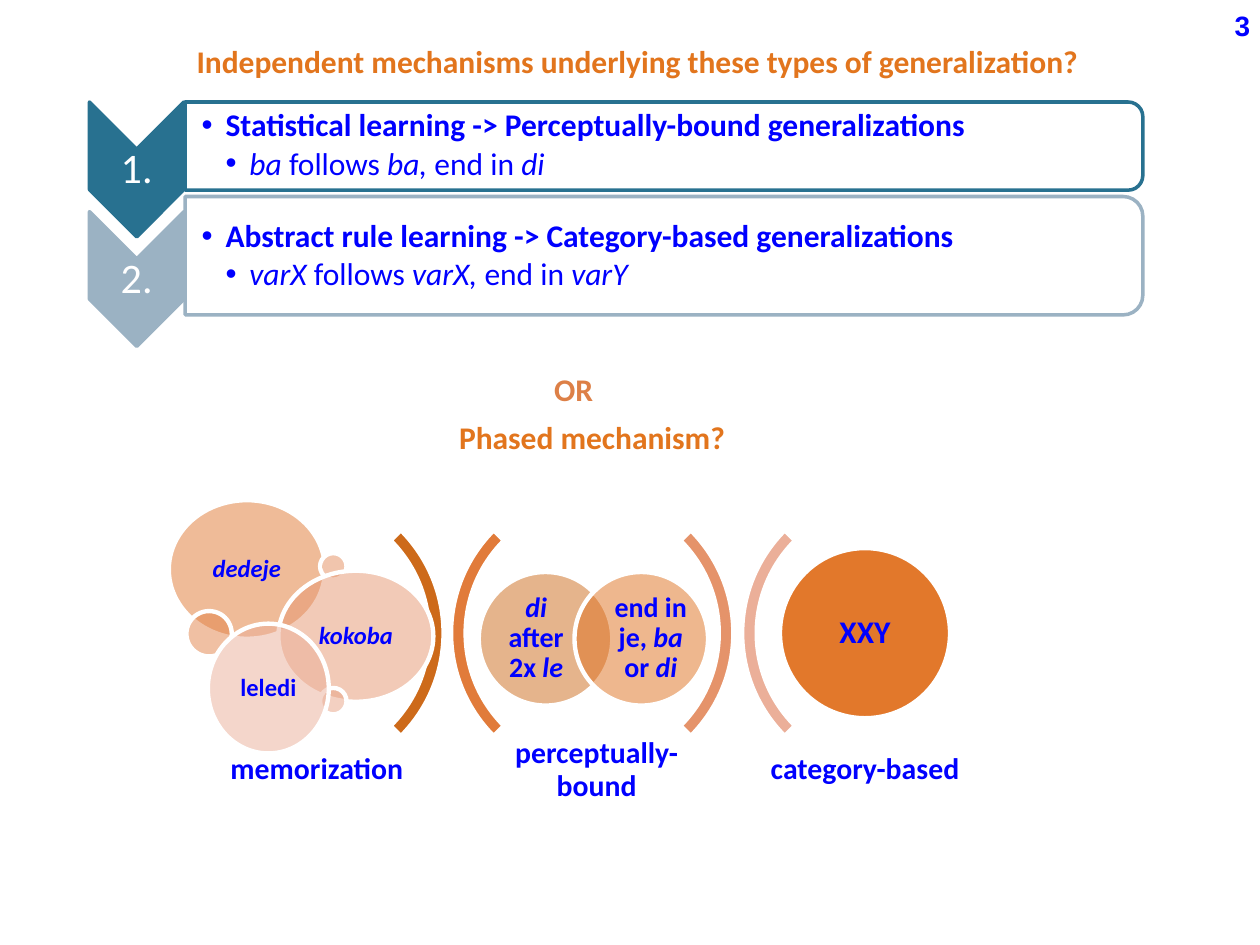
from lxml.etree import SubElement
from pptx import Presentation
from pptx.dml.color import RGBColor
from pptx.enum.shapes import MSO_SHAPE
from pptx.enum.text import MSO_ANCHOR, MSO_AUTO_SIZE, PP_ALIGN
from pptx.oxml.ns import qn
from pptx.util import Inches, Pt

prs = Presentation()
prs.slide_width, prs.slide_height = Inches(10), Inches(7.5)
CELL = prs.slide_width / 100
BLUE, ORANGE, WHITE = "0000FF", "E2751D", "FFFFFF"
s = prs.slides.add_slide(prs.slide_layouts[3])
title, *bodies = s.placeholders


def draw(kind, box, fill, line=WHITE, width=2.5, rotation=0, alpha=100):
    sp = s.shapes.add_shape(kind, *[int(v * CELL) for v in box])
    sp.shadow.inherit = False
    sp.rotation = rotation
    sp.fill.solid()
    sp.fill.fore_color.rgb = RGBColor.from_string(fill)
    if alpha < 100:
        color = sp._element.spPr.find(qn("a:solidFill"))[0]
        SubElement(color, qn("a:alpha"), val=str(alpha * 1000))
    sp.line.color.rgb = RGBColor.from_string(line)
    sp.line.width = Pt(width)
    return sp


def write(text, box, holder=None, size=18, color=BLUE, bold=True, font="Calibri",
          align=PP_ALIGN.CENTER, anchor=MSO_ANCHOR.MIDDLE, spacing=0.9,
          inset=(0, 0, 0, 0), bullets=False):
    sp = holder or s.shapes.add_textbox(0, 0, 0, 0)
    s.shapes._spTree.append(sp._element)
    sp.left, sp.top, sp.width, sp.height = [int(v * CELL) for v in box]
    tf = sp.text_frame
    tf.auto_size = MSO_AUTO_SIZE.NONE
    tf.word_wrap = True
    tf.vertical_anchor = anchor
    tf.margin_left, tf.margin_top, tf.margin_right, tf.margin_bottom = [int(v * CELL) for v in inset]
    for level, line in enumerate(text.split("\n")):
        p = tf.add_paragraph() if level else tf.paragraphs[0]
        p.alignment, p.line_spacing = align, spacing
        p.space_before = Pt(0)
        if bullets:
            p.level = level
            p.space_after = Pt(2.7)
            pPr = p._p.get_or_add_pPr()
            pPr.set("marL", str(int(1.9 * CELL * (level + 1))))
            pPr.set("indent", str(int(-1.9 * CELL)))
            SubElement(pPr, qn("a:buChar"), char="•")
        for i, part in enumerate(line.split("*")):
            if part:
                r = p.add_run()
                r.text = part
                r.font.name, r.font.size = font, Pt(size)
                r.font.bold = bold and level == 0
                r.font.italic = i % 2 == 1
                r.font.color.rgb = RGBColor.from_string(color)


plain = dict(align=PP_ALIGN.LEFT, anchor=MSO_ANCHOR.TOP, spacing=1, inset=(1, 0.5, 1, 0.5))
write("Independent mechanisms underlying these types of generalization?",
      (14.6, 2.8, 76.1, 4), title, color=ORANGE, **plain)

steps = [
    ("1.", "287190", 9.7, (49.2, -26.4, 7, 76), (14.6, 8.4, 75.7, 6.3),
     "Statistical learning -> Perceptually-bound generalizations\n*ba *follows *ba,* end in* di*"),
    ("2.", "9BB2C3", 18.4, (48, -17.7, 9.4, 76), (14.6, 16.1, 75.6, 8.5),
     "Abstract rule learning -> Category-based generalizations\n*varX *follows *varX, *end in *varY*"),
]
for body, (number, color, top, panel, box, text) in zip(bodies, steps):
    draw(MSO_SHAPE.CHEVRON, (5.5, top, 10.7, 7.5), color, color, 2, 90)
    write(number, (7.1, top + 2.2, 7.5, 3.2), size=24, color=WHITE, bold=False)
    draw(MSO_SHAPE.ROUND_2_SAME_RECTANGLE, panel, WHITE, color, 2, 90, 90)
    write(text, box, body, align=PP_ALIGN.LEFT, inset=(1.4, 0.1, 0.1, 0.1), bullets=True)

write("OR", (43, 28.9, 8.1, 4), color="DD8047", **plain)
write("Phased mechanism?", (28.8, 32.7, 36.4, 4), color=ORANGE,
      **{**plain, "align": PP_ALIGN.CENTER})

for left, rotation, color in [(12.1, 90, "CD6A1A"), (35.8, 270, "E17B3A"),
                              (35.1, 90, "E5936A"), (58.9, 270, "EBAF99")]:
    arc = draw(MSO_SHAPE.BLOCK_ARC, (left, 38.7, 23.1, 23.1), color, rotation=rotation)
    for i, value in enumerate((135, 189, 0.05)):
        arc.adjustments[i] = value

for text, left, top, height in [("memorization", 16.4, 58.8, 4.6),
                                ("perceptually-bound", 38.6, 54.8, 12.7),
                                ("category-based", 59.9, 57.3, 7.6)]:
    write(text, (left, top, 17.5, height), size=17, inset=(0.7, 0.7, 0.7, 0.7))

for text, left, text_left, color in [("*di* after 2x *le*", 38, 39.5, "CD6A1A"),
                                     ("end in je, *ba *or* di*", 45.6, 48.6, "DF701F")]:
    draw(MSO_SHAPE.OVAL, (left, 45.4, 10.6, 10.6), color, alpha=50)
    write(text, (text_left, 46.6, 6.1, 8.1), size=16)

bubbles = [
    ("*dedeje*", 13.4, 39.7, 12.4, 11, "E17833", 50, 14),
    ("", 14.8, 48.5, 3.6, 3.6, "E28248", 50, 14),
    ("", 25.4, 43.9, 2.1, 2.1, "E48C5D", 50, 14),
    ("*kokoba*", 22.1, 45.3, 12.3, 10.4, "E69771", 50, 14),
    ("", 25.4, 54.6, 2.1, 2.1, "E8A385", 50, 14),
    ("leledi", 16.5, 49.5, 9.6, 10.3, "EBAF99", 50, 14),
    ("XXY", 61.9, 43.5, 13.5, 13.5, "E2782B", 100, 18),
]
for text, left, top, width, height, color, alpha, size in bubbles:
    draw(MSO_SHAPE.OVAL, (left, top, width, height), color, alpha=alpha)
    if text:
        write(text, (left + 0.145 * width, top + 0.145 * height, 0.71 * width, 0.71 * height),
              size=size, inset=(0.6, 0.6, 0.6, 0.6))

write("3", (97, 0.2, 2.5, 3.7), size=16, font="Arial", **plain)
prs.save("out.pptx")
